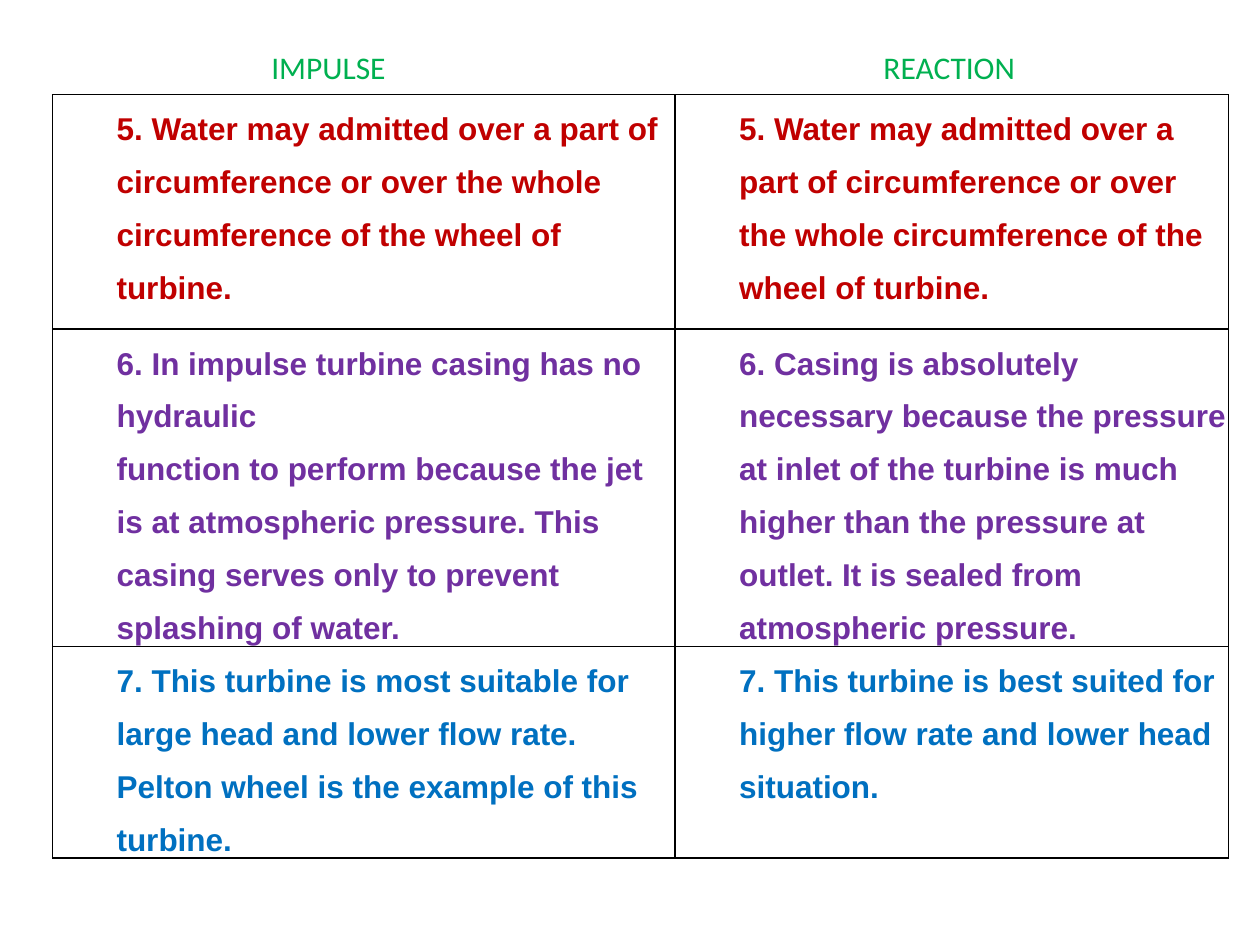
from pptx import Presentation
from pptx.dml.color import RGBColor
from pptx.oxml.ns import qn
from pptx.util import Cm, Pt
from lxml.etree import SubElement

BLACK = RGBColor(0x00, 0x00, 0x00)
WHITE = RGBColor(0xFF, 0xFF, 0xFF)
GREEN = RGBColor(0x00, 0xB0, 0x50)
RED = RGBColor(0xC0, 0x00, 0x00)
PURPLE = RGBColor(0x70, 0x30, 0xA0)
BLUE = RGBColor(0x00, 0x70, 0xC0)

# Content: heading with its tab stop, then rows of (colour, height, impulse, reaction)
HEADINGS = [("IMPULSE", Cm(3.74)), ("REACTION", Cm(16.08))]
WATER = ("5. Water may admitted over a part of circumference or over the whole "
         "circumference of the wheel of turbine.")
ROWS = [
    (RED, Cm(4.72), WATER, WATER),
    (PURPLE, Cm(6.4),
     "6. In impulse turbine casing has no hydraulic\vfunction to perform because "
     "the jet is at atmospheric pressure. This casing serves only to prevent "
     "splashing of water.",
     "6. Casing is absolutely necessary because the pressure at inlet of the "
     "turbine is much higher than the pressure at outlet. It is sealed from "
     "atmospheric pressure."),
    (BLUE, Cm(3.76),
     "7. This turbine is most suitable for large head and lower flow rate. "
     "Pelton wheel is the example of this turbine.",
     "7. This turbine is best suited for higher flow rate and lower head situation."),
]
COL_WIDTHS = [Cm(12.55), Cm(11.15)]


def format_runs(p, font, color, bold=False):
    for r in p.runs:
        r.font.name = font
        r.font.size = Pt(18)
        r.font.bold = bold
        r.font.color.rgb = color


def add_borders(cell):
    tc_pr = cell._tc.get_or_add_tcPr()
    for side in ("a:lnL", "a:lnR", "a:lnT", "a:lnB"):
        ln = SubElement(tc_pr, qn(side), w=str(Pt(1)))
        fill = SubElement(ln, qn("a:solidFill"))
        SubElement(fill, qn("a:srgbClr"), val=str(BLACK))


def fill_cell(cell, text, color):
    add_borders(cell)  # borders come before the fill in the XML
    cell.fill.solid()
    cell.fill.fore_color.rgb = WHITE
    cell.margin_left = cell.margin_right = Cm(0.02)
    cell.margin_top = cell.margin_bottom = 0
    p = cell.text_frame.paragraphs[0]
    p.text = text
    p.level = 1
    p.line_spacing = 1.5
    p_pr = p._p.get_or_add_pPr()
    p_pr.set("marL", str(Cm(1.27)))
    p_pr.set("indent", "0")
    format_runs(p, "Arial", color, bold=True)


prs = Presentation()
prs.slide_width, prs.slide_height = Cm(25.4), Cm(19.05)
s = prs.slides.add_slide(prs.slide_layouts[6])

# Comparison table
table = s.shapes.add_table(len(ROWS), len(COL_WIDTHS), Cm(1.06), Cm(1.91),
                           sum(COL_WIDTHS), sum(row[1] for row in ROWS)).table
table.first_row = table.horz_banding = False
for column, width in zip(table.columns, COL_WIDTHS):
    column.width = width
for i, (color, height, *texts) in enumerate(ROWS):
    table.rows[i].height = height
    for j, text in enumerate(texts):
        fill_cell(table.cell(i, j), text, color)

# Column headings, placed by tab stops
tf = s.shapes.add_textbox(Cm(1.48), Cm(0.85), Cm(22.86), Cm(1.02)).text_frame
tf.word_wrap = True
p = tf.paragraphs[0]
p.text = "".join("\t" + name for name, _ in HEADINGS)
tabs = SubElement(p._p.get_or_add_pPr(), qn("a:tabLst"))
for _, pos in HEADINGS:
    SubElement(tabs, qn("a:tab"), pos=str(pos), algn="l")
format_runs(p, "Calibri", GREEN)

prs.save("out.pptx")
